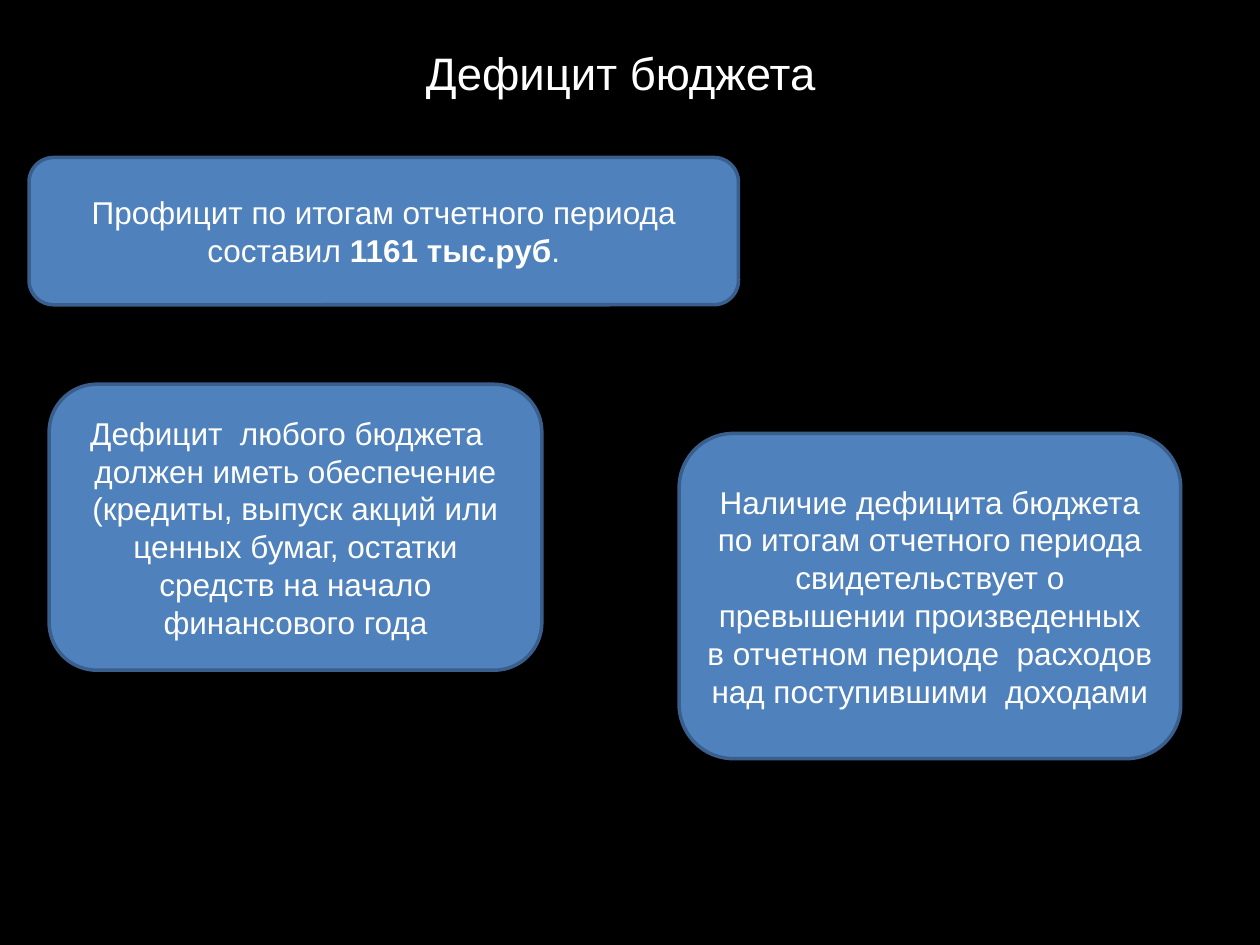
from dataclasses import dataclass
from pptx import Presentation
from pptx.dml.color import RGBColor as RGB
from pptx.enum.shapes import MSO_SHAPE as Shape
from pptx.enum.text import MSO_ANCHOR as Anchor, MSO_AUTO_SIZE as Fit, PP_ALIGN as Align
from pptx.util import Pt


@dataclass(frozen=True)
class Theme:
    font: str = "Arial"
    back: RGB = RGB(0, 0, 0)
    ink: RGB = RGB(255, 255, 255)
    fill: RGB = RGB(0x4F, 0x81, 0xBD)
    edge: RGB = RGB(0x3A, 0x5F, 0x8C)
    line: float = 2
    head: float = 26
    body: float = 18


THEME = Theme()
SIZE = (720, 540)

# Content: (left, top, width, height) in points, then runs of (text, bold)
TITLE = ((236.2, 22.3, 281.5, 38.9), [("Дефицит бюджета", False)])
CARDS = [
    ((16.6, 90, 405.4, 84.2), [
        ("Профицит по итогам отчетного периода составил ", False),
        ("1161 тыс.руб", True),
        (".", False),
    ]),
    ((388.1, 247.7, 286.6, 185.8), [
        ("Наличие дефицита бюджета по итогам отчетного периода "
         "свидетельствует о превышении произведенных в отчетном периоде  "
         "расходов над поступившими  доходами", False),
    ]),
    ((28.1, 219.6, 281.5, 163.4), [
        ("Дефицит  любого бюджета   должен иметь обеспечение "
         "(кредиты, выпуск акций или ценных бумаг, остатки средств "
         "на начало финансового года", False),
    ]),
]


def write(shape, runs, size, align, anchor):
    frame = shape.text_frame
    frame.word_wrap = True
    frame.auto_size = Fit.NONE
    frame.vertical_anchor = anchor
    para = frame.paragraphs[0]
    para.alignment = align
    for text, bold in runs:
        run = para.add_run()
        run.text = text
        font = run.font
        font.name, font.size, font.bold = THEME.font, Pt(size), bold
        font.color.rgb = THEME.ink


def add_card(slide, box, runs):
    card = slide.shapes.add_shape(Shape.ROUNDED_RECTANGLE, *map(Pt, box))
    card.shadow.inherit = False
    card.fill.solid()
    card.fill.fore_color.rgb = THEME.fill
    card.line.color.rgb = THEME.edge
    card.line.width = Pt(THEME.line)
    write(card, runs, THEME.body, Align.CENTER, Anchor.MIDDLE)


def main():
    deck = Presentation()
    deck.slide_width, deck.slide_height = map(Pt, SIZE)
    slide = deck.slides.add_slide(deck.slide_layouts.get_by_name("Title Only"))
    slide.background.fill.solid()
    slide.background.fill.fore_color.rgb = THEME.back

    # Title
    box, runs = TITLE
    title = slide.shapes.title
    title.left, title.top, title.width, title.height = map(Pt, box)
    write(title, runs, THEME.head, Align.LEFT, Anchor.TOP)

    # Cards
    for box, runs in CARDS:
        add_card(slide, box, runs)

    deck.save("out.pptx")


if __name__ == "__main__":
    main()
